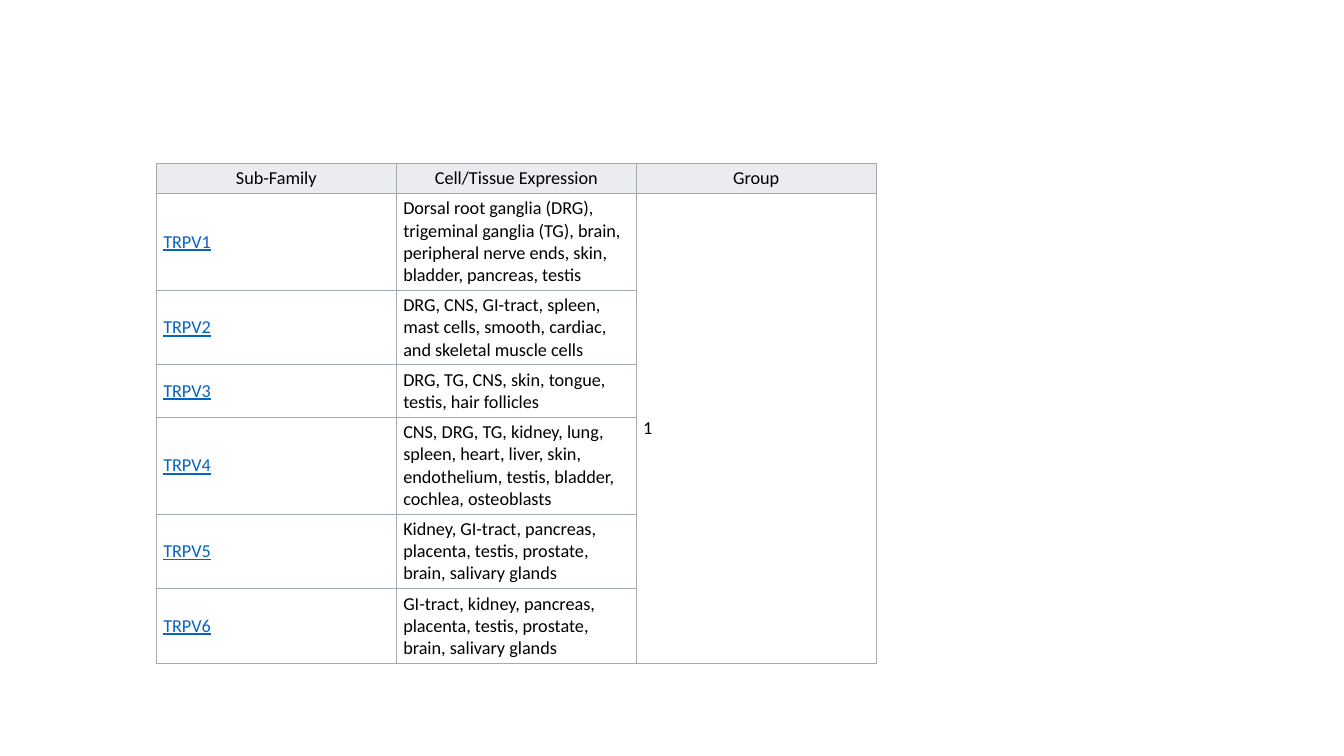
from lxml import etree
from pptx import Presentation
from pptx import util as u
from pptx.dml.color import RGBColor
from pptx.enum import text
from pptx.oxml.ns import qn

HEADERS = ["Sub-Family", "Cell/Tissue Expression", "Group"]
EXPRESSION = [
    ("TRPV1", "Dorsal root ganglia (DRG), trigeminal ganglia (TG), brain, "
              "peripheral nerve ends, skin, bladder, pancreas, testis", 0.94),
    ("TRPV2", "DRG, CNS, GI-tract, spleen, mast cells, smooth, cardiac, "
              "and skeletal muscle cells", 0.72),
    ("TRPV3", "DRG, TG, CNS, skin, tongue, testis, hair follicles", 0.51),
    ("TRPV4", "CNS, DRG, TG, kidney, lung, spleen, heart, liver, skin, "
              "endothelium, testis, bladder, cochlea, osteoblasts", 0.94),
    ("TRPV5", "Kidney, GI-tract, pancreas, placenta, testis, prostate, "
              "brain, salivary glands", 0.72),
    ("TRPV6", "GI-tract, kidney, pancreas, placenta, testis, prostate, "
              "brain, salivary glands", 0.72),
]
GROUP = "1"
LEFT, TOP, COL_WIDTH, HEADER_HEIGHT = 1.55, 1.62, 2.38, 0.3
BLACK, LINK, HEADER_FILL, BORDER = "000000", "0563C1", "EAECF0", "A2A9B1"


def rgb(value):
    return RGBColor.from_string(value)


def write(cell, words, color=BLACK, underline=False, align=text.PP_ALIGN.LEFT):
    p = cell.text_frame.paragraphs[0]
    p.alignment = align
    r = p.add_run()
    r.text = words
    r.font.name = "Calibri"
    r.font.size = u.Pt(13)
    r.font.bold = False
    r.font.underline = underline
    r.font.color.rgb = rgb(color)


def style(cell, fill=None):
    cell.vertical_anchor = text.MSO_ANCHOR.MIDDLE
    cell.margin_left = cell.margin_right = u.Inches(0.07)
    cell.margin_top = cell.margin_bottom = u.Inches(0.04)
    props = cell._tc.get_or_add_tcPr()
    for side in ("a:lnL", "a:lnR", "a:lnT", "a:lnB"):
        line = etree.SubElement(props, qn(side), w=str(u.Pt(0.75)))
        solid = etree.SubElement(line, qn("a:solidFill"))
        etree.SubElement(solid, qn("a:srgbClr"), val=BORDER)
    if fill:
        cell.fill.solid()
        cell.fill.fore_color.rgb = rgb(fill)
    else:
        cell.fill.background()


def main():
    prs = Presentation()
    prs.slide_width, prs.slide_height = u.Inches(13.33), u.Inches(7.5)
    s = prs.slides.add_slide(prs.slide_layouts[6])
    heights = [HEADER_HEIGHT] + [height for _, _, height in EXPRESSION]
    table = s.shapes.add_table(
        len(heights), len(HEADERS), u.Inches(LEFT), u.Inches(TOP),
        u.Inches(COL_WIDTH * len(HEADERS)), u.Inches(sum(heights))).table
    table.first_row = table.horz_banding = False
    for column in table.columns:
        column.width = u.Inches(COL_WIDTH)
    for i, height in enumerate(heights):
        table.rows[i].height = u.Inches(height)
        for j in range(len(HEADERS)):
            style(table.cell(i, j), HEADER_FILL if i == 0 else None)

    for j, header in enumerate(HEADERS):
        write(table.cell(0, j), header, align=text.PP_ALIGN.CENTER)
    for i, (family, tissues, _) in enumerate(EXPRESSION, 1):
        write(table.cell(i, 0), family, color=LINK, underline=True)
        write(table.cell(i, 1), tissues)
    table.cell(1, 2).merge(table.cell(len(EXPRESSION), 2))
    write(table.cell(1, 2), GROUP)
    prs.save("out.pptx")


if __name__ == "__main__":
    main()
